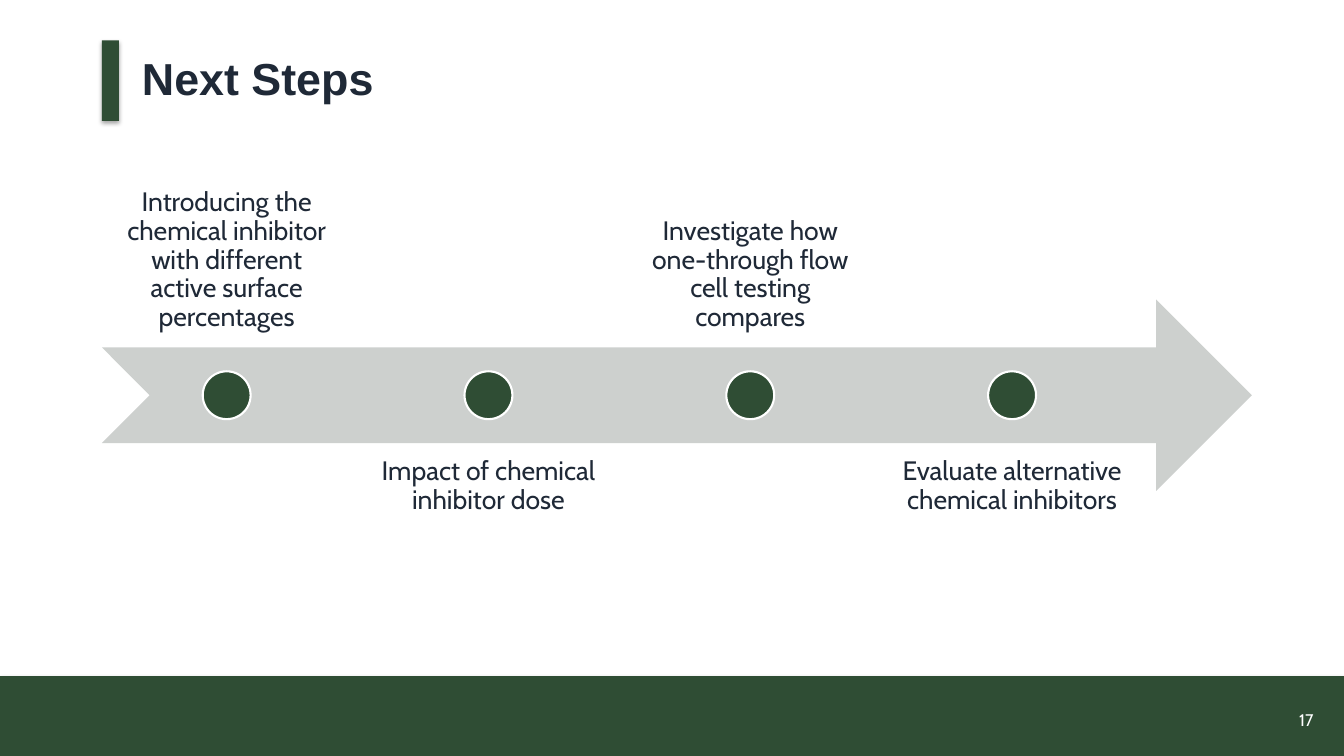
from lxml import etree
from pptx import Presentation
from pptx.dml.color import RGBColor
from pptx.enum.shapes import MSO_SHAPE
from pptx.enum.text import MSO_ANCHOR, PP_ALIGN
from pptx.oxml import parse_xml
from pptx.oxml.ns import nsdecls, qn
from pptx.util import Pt

GREEN = RGBColor(0x2F, 0x4D, 0x34)
GREY = RGBColor(0xCD, 0xD0, 0xCE)
INK = RGBColor(0x1F, 0x29, 0x37)
WHITE = RGBColor(0xFF, 0xFF, 0xFF)

RECTANGLE = MSO_SHAPE.RECTANGLE
OVAL = MSO_SHAPE.OVAL
NOTCHED_ARROW = MSO_SHAPE.NOTCHED_RIGHT_ARROW
TOP, MIDDLE, BOTTOM = MSO_ANCHOR.TOP, MSO_ANCHOR.MIDDLE, MSO_ANCHOR.BOTTOM
LEFT, CENTER, RIGHT = PP_ALIGN.LEFT, PP_ALIGN.CENTER, PP_ALIGN.RIGHT

presentation = Presentation()
presentation.slide_width = Pt(960)
presentation.slide_height = Pt(540)
slide = presentation.slides.add_slide(presentation.slide_layouts[6])


def add_filled(kind, left, top, width, height, color):
    shape = slide.shapes.add_shape(kind, Pt(left), Pt(top), Pt(width), Pt(height))
    shape.shadow.inherit = False
    shape.fill.solid()
    shape.fill.fore_color.rgb = color
    shape.line.fill.background()
    return shape


def add_text(text, left, top, width, height, size, color, font, align, anchor):
    box = slide.shapes.add_textbox(Pt(left), Pt(top), Pt(width), Pt(height))
    frame = box.text_frame
    frame.word_wrap = True
    frame.vertical_anchor = anchor
    paragraph = frame.paragraphs[0]
    paragraph.text = text
    paragraph.alignment = align
    paragraph.font.size = Pt(size)
    paragraph.font.name = font
    paragraph.font.color.rgb = color
    return frame


# Footer band and title accent, both with a soft shadow below
for bounds in ((0, 483, 960, 57.5), (72.7, 28.8, 12.2, 57.6)):
    band = add_filled(RECTANGLE, *bounds, GREEN)
    effects = band.element.spPr.find(qn("a:effectLst"))
    shadow = parse_xml(
        f'<a:outerShdw {nsdecls("a")} blurRad="{Pt(3.1)}" dist="{Pt(1.8)}" '
        'dir="5400000" rotWithShape="0"/>')
    shadow_color = etree.SubElement(shadow, qn("a:srgbClr"), val="000000")
    etree.SubElement(shadow_color, qn("a:alpha"), val="35000")
    effects.append(shadow)

# Title and page number
title = add_text("Next Steps", 94.3, 28.8, 815.8, 57.6, 32, INK, "Arial", LEFT, MIDDLE)
title.paragraphs[0].font.bold = True
title.paragraphs[0].line_spacing = 0.9
add_text("17", 729.4, 499.9, 216, 28.8, 12, WHITE, "Cabin", RIGHT, MIDDLE)

# Timeline arrow
add_filled(NOTCHED_ARROW, 72.7, 213.9, 821.5, 136.8, GREY)

# Steps, with labels alternating above and below the arrow
STEPS = (
    "Introducing the chemical inhibitor with different active surface percentages",
    "Impact of chemical inhibitor dose",
    "Investigate how one-through flow cell testing compares",
    "Evaluate alternative chemical inhibitors",
)
STEP_PITCH = 187
LABEL_WIDTH = 178
DOT_SIZE = 34.2

for index, step in enumerate(STEPS):
    left = 72.9 + index * STEP_PITCH
    top, anchor = (111.2, BOTTOM) if index % 2 == 0 else (316.5, TOP)
    label = add_text(step, left, top, LABEL_WIDTH, 136.8, 19, INK, "Cabin", CENTER, anchor)
    label.margin_left = label.margin_right = Pt(10.6)
    label.margin_top = label.margin_bottom = Pt(10.6)
    label.paragraphs[0].line_spacing = 0.9

    dot_left = left + (LABEL_WIDTH - DOT_SIZE) / 2
    dot = add_filled(OVAL, dot_left, 265.2, DOT_SIZE, DOT_SIZE, GREEN)
    dot.line.color.rgb = WHITE
    dot.line.width = Pt(1.5)

presentation.save("out.pptx")
